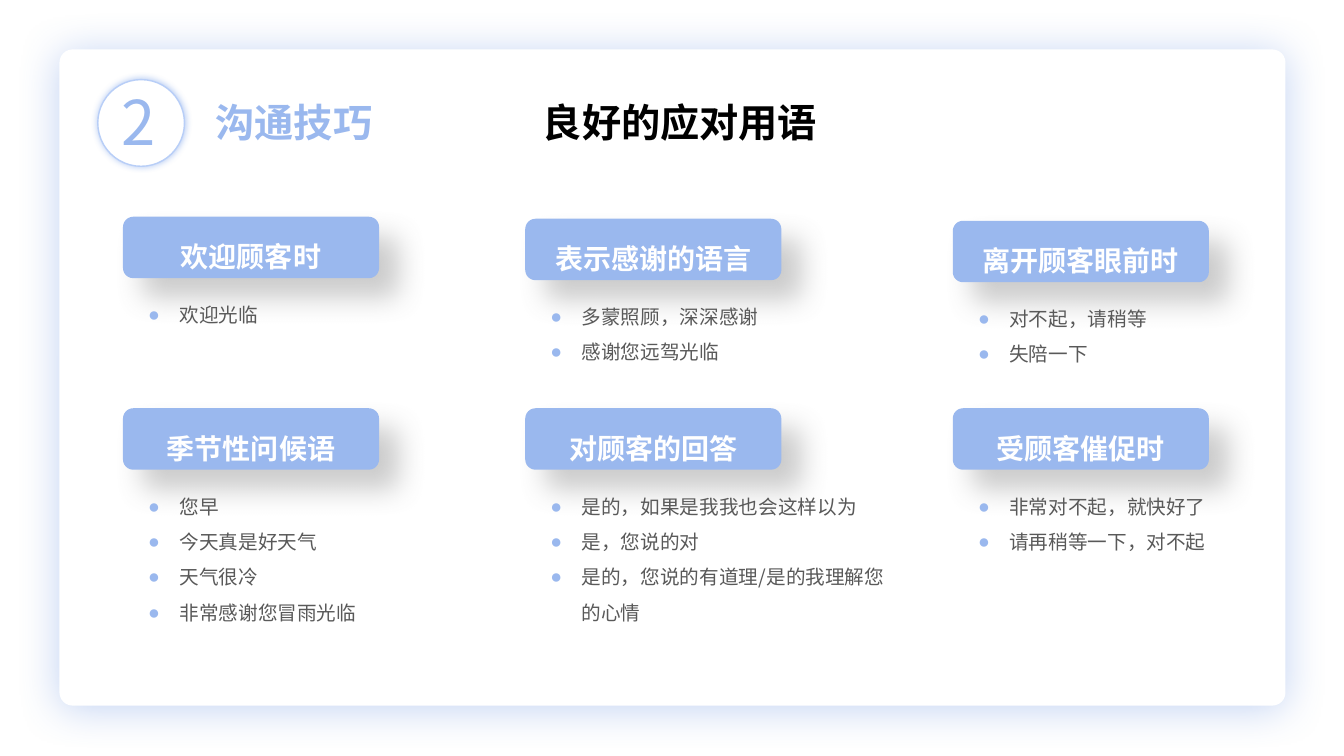
from copy import deepcopy
from dataclasses import dataclass

from lxml.etree import SubElement
from pptx import Presentation
from pptx.dml.color import RGBColor
from pptx.enum.shapes import MSO_SHAPE
from pptx.enum.text import MSO_ANCHOR, MSO_AUTO_SIZE, PP_ALIGN
from pptx.oxml.ns import qn
from pptx.util import Inches, Pt


@dataclass(frozen=True)
class Theme:
    font: str = "Noto Sans CJK SC"
    blue: str = "9AB8EE"
    ring: str = "B8CEF7"
    white: str = "FFFFFF"
    black: str = "000000"
    grey: str = "595959"
    number_size: int = 44
    title_size: int = 28
    card_size: int = 20
    list_size: int = 14
    # colour, blur, distance (points), direction (degrees)
    panel_shadow: tuple = ("6891E1", 30, 3, 90)
    ring_shadow: tuple = ("3F78E2", 5, 0, 0)
    card_shadow: tuple = ("808080", 20, 20, 45)


THEME = Theme()

# left edge and list width of each column
COLUMNS = [(1.22, 2.59), (5.21, 3.66), (9.45, 2.85)]
# top of the first column and drop from one column to the next
ROWS = [(2.15, 0.02), (4.05, 0)]
CARDS = [
    [
        ("欢迎顾客时", ["欢迎光临"]),
        ("表示感谢的语言", ["多蒙照顾，深深感谢", "感谢您远驾光临"]),
        ("离开顾客眼前时", ["对不起，请稍等", "失陪一下"]),
    ],
    [
        ("季节性问候语", ["您早", "今天真是好天气", "天气很冷", "非常感谢您冒雨光临"]),
        ("对顾客的回答", ["是的，如果是我我也会这样以为", "是，您说的对",
                    "是的，您说的有道理/是的我理解您的心情"]),
        ("受顾客催促时", ["非常对不起，就快好了", "请再稍等一下，对不起"]),
    ],
]


def set_values(target, values):
    for name, value in values.items():
        setattr(target, name, value)


def place(sp, left, top, width, height):
    set_values(sp, {"left": Inches(left), "top": Inches(top),
                    "width": Inches(width), "height": Inches(height)})


def write(p, text, size, color, bold=False):
    r = p.add_run()
    r.text = text
    set_values(r.font, {"name": THEME.font, "size": Pt(size), "bold": bold})
    r.font.color.rgb = RGBColor.from_string(color)
    SubElement(r.font._element, qn("a:ea"), typeface=THEME.font)


def add_shadowed(slide, kind, box, fill, shadow):
    sp = slide.shapes.add_shape(kind, *map(Inches, box))
    sp.fill.solid()
    sp.fill.fore_color.rgb = RGBColor.from_string(fill)
    sp.line.fill.background()
    sp.shadow.inherit = False
    color, blur, distance, angle = shadow
    outer = SubElement(sp._element.spPr.find(qn("a:effectLst")), qn("a:outerShdw"),
                       blurRad=str(Pt(blur)), dist=str(Pt(distance)),
                       dir=str(angle * 60000), algn="ctr", rotWithShape="0")
    clr = SubElement(outer, qn("a:srgbClr"), val=color)
    SubElement(clr, qn("a:alpha"), val="40000")
    return sp


def add_list_placeholders(layout, count):
    """Give the layout as many body placeholders as the slide has lists."""
    body = layout.placeholders[1]._element
    for i in range(1, count):
        extra = deepcopy(body)
        extra.xpath(".//p:ph")[0].set("idx", str(20 + i))
        c_nv_pr = extra.xpath(".//p:cNvPr")[0]
        c_nv_pr.set("id", str(20 + i))
        c_nv_pr.set("name", f"Content Placeholder {20 + i}")
        body.getparent().append(extra)


def draw_panel(slide, box):
    sp = add_shadowed(slide, MSO_SHAPE.ROUNDED_RECTANGLE, box,
                      THEME.white, THEME.panel_shadow)
    sp.adjustments[0] = 0.02
    slide.shapes._spTree.insert(2, sp._element)


def draw_header(slide, left, top):
    ring = add_shadowed(slide, MSO_SHAPE.OVAL, (left, top, 0.86, 0.86),
                        THEME.white, THEME.ring_shadow)
    ring.line.color.rgb = RGBColor.from_string(THEME.ring)
    ring.line.width = Pt(1)
    tf = ring.text_frame
    set_values(tf, {"margin_left": 0, "margin_right": Inches(0.04), "margin_top": 0,
                    "margin_bottom": Inches(0.04), "word_wrap": False,
                    "vertical_anchor": MSO_ANCHOR.MIDDLE})
    tf.paragraphs[0].alignment = PP_ALIGN.CENTER
    write(tf.paragraphs[0], "2", THEME.number_size, THEME.blue)

    section = slide.shapes.add_textbox(
        *map(Inches, (left + 1.07, top + 0.14, 3.16, 0.57)))
    section.text_frame.word_wrap = True
    write(section.text_frame.paragraphs[0], "沟通技巧",
          THEME.title_size, THEME.blue, bold=True)

    title = slide.shapes.title
    place(title, left + 3.16, top + 0.19, 5.23, 0.56)
    set_values(title.text_frame, {"auto_size": MSO_AUTO_SIZE.NONE,
                                  "vertical_anchor": MSO_ANCHOR.TOP})
    p = title.text_frame.paragraphs[0]
    set_values(p, {"alignment": PP_ALIGN.CENTER, "line_spacing": 0.9})
    write(p, "良好的应对用语", THEME.title_size, THEME.black, bold=True)


def fill_list(body, items, box):
    place(body, *box)
    tf = body.text_frame
    set_values(tf, {"auto_size": MSO_AUTO_SIZE.NONE, "word_wrap": True,
                    "vertical_anchor": MSO_ANCHOR.TOP})
    for i, item in enumerate(items):
        p = tf.add_paragraph() if i else tf.paragraphs[0]
        set_values(p, {"line_spacing": 1.5, "space_before": Pt(0)})
        p_pr = p._p.get_or_add_pPr()
        p_pr.set("marL", str(Inches(0.31)))
        p_pr.set("indent", str(-Inches(0.31)))
        SubElement(SubElement(p_pr, qn("a:buClr")), qn("a:srgbClr"), val=THEME.blue)
        SubElement(p_pr, qn("a:buChar"), char="●")
        write(p, item, THEME.list_size, THEME.grey)


def draw_card(slide, body, heading, items, left, top, list_width):
    sp = add_shadowed(slide, MSO_SHAPE.ROUNDED_RECTANGLE, (left, top, 2.54, 0.61),
                      THEME.blue, THEME.card_shadow)
    tf = sp.text_frame
    set_values(tf, {"margin_top": Inches(0.18), "margin_bottom": 0,
                    "vertical_anchor": MSO_ANCHOR.MIDDLE})
    tf.paragraphs[0].alignment = PP_ALIGN.CENTER
    write(tf.paragraphs[0], heading, THEME.card_size, THEME.white, bold=True)

    fill_list(body, items, (left + 0.15, top + 0.69, list_width, 1.51))
    slide.shapes._spTree.append(body._element)  # keep the list above the shadow


def main():
    prs = Presentation()
    set_values(prs, {"slide_width": Inches(13.33), "slide_height": Inches(7.5)})
    layout = prs.slide_layouts[1]
    add_list_placeholders(layout, sum(map(len, CARDS)))
    slide = prs.slides.add_slide(layout)
    bodies = iter(list(slide.placeholders)[1:])

    draw_panel(slide, (0.59, 0.49, 12.16, 6.51))
    draw_header(slide, 0.97, 0.79)
    for (top, drop), cards in zip(ROWS, CARDS):
        for col, ((left, width), (heading, items)) in enumerate(zip(COLUMNS, cards)):
            draw_card(slide, next(bodies), heading, items,
                      left, top + drop * col, width)
    prs.save("out.pptx")


if __name__ == "__main__":
    main()
